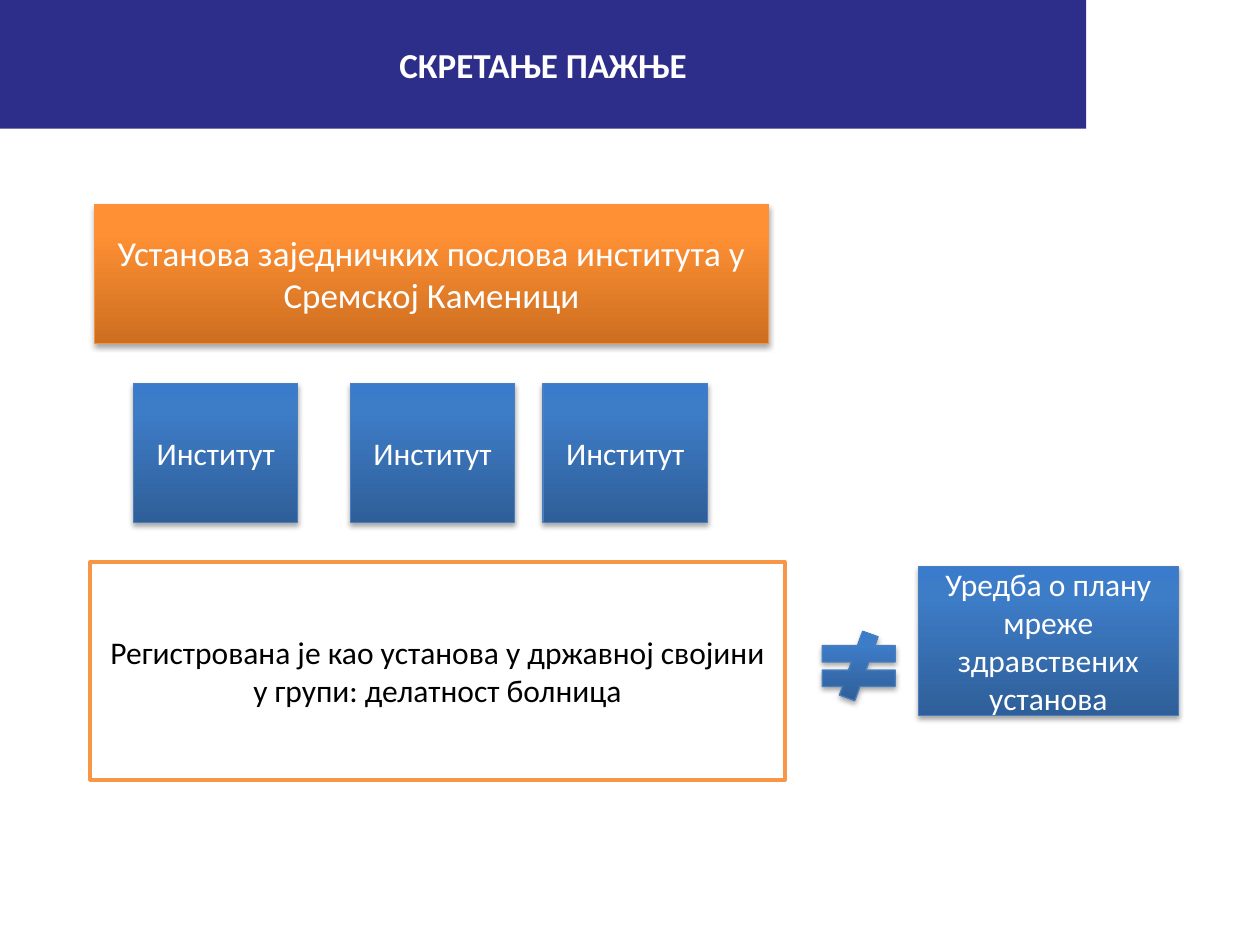
from copy import deepcopy

from lxml import etree
from pptx import Presentation
from pptx.dml.color import RGBColor
from pptx.enum.shapes import MSO_SHAPE
from pptx.enum.text import MSO_ANCHOR, PP_ALIGN
from pptx.oxml.ns import qn
from pptx.util import Pt

RECT, NOT_EQUAL = MSO_SHAPE.RECTANGLE, MSO_SHAPE.MATH_NOT_EQUAL
MIDDLE, CENTER = MSO_ANCHOR.MIDDLE, PP_ALIGN.CENTER
FONT = "Calibri"
COLORS = {
    "navy": "2D2D8A", "white": "FFFFFF", "black": "000000",
    "frame": "F79646", "orange_line": "F69240", "blue_line": "4B7EBC",
}
GRADIENTS = {
    "orange": ((0, "CC6E20"), (0.8, "FF9034"), (1, "FF9136")),
    "blue": ((0, "2F5F99"), (0.8, "3D7CC7"), (1, "3A7CCB")),
}

TITLE = "СКРЕТАЊЕ ПАЖЊЕ"
REGISTRATION = "Регистрована је као установа у државној својини у групи: делатност болница"
JOINT_BODY = "Установа заједничких послова института у Сремској Каменици"
REGULATION = "Уредба о плану мреже здравствених установа"
INSTITUTE = "Институт"
INSTITUTE_LEFTS = (76.3, 200.2, 310.3)

# (preset, (left, top, width, height), gradient, text, text size)
RAISED = [(RECT, (53.9, 116.8, 385.4, 79.4), "orange", JOINT_BODY, 20)]
RAISED += [(RECT, (x, 219, 93.9, 79.4), "blue", INSTITUTE, 18) for x in INSTITUTE_LEFTS]
RAISED += [
    (RECT, (524.8, 323.7, 148.6, 85.1), "blue", REGULATION, 18),
    (NOT_EQUAL, (462.4, 360.7, 56.7, 39.7), "blue", "", 18),
]


def rgb(name):
    return RGBColor.from_string(COLORS[name])


def add_box(slide, preset, box, text, size, color, bold=False, wrap=True):
    sp = slide.shapes.add_shape(preset, *(Pt(v) for v in box))
    sp.shadow.inherit = False
    tf = sp.text_frame
    tf.word_wrap = wrap
    tf.vertical_anchor = MIDDLE
    if text:
        tf.text = text
        p = tf.paragraphs[0]
        p.alignment = CENTER
        font = p.runs[0].font
        font.name, font.size, font.bold = FONT, Pt(size), bold
        font.color.rgb = rgb(color)
    return sp


def set_gradient(sp, stops):
    """Fill from bottom to top with three stops."""
    sp.fill.gradient()
    sp.fill.gradient_angle = 90
    stop_list = sp._element.spPr.find(".//" + qn("a:gsLst"))
    stop_list.append(deepcopy(stop_list[-1]))
    for stop, (position, color) in zip(sp.fill.gradient_stops, stops):
        stop.position = position
        stop.color.rgb = RGBColor.from_string(color)


def set_shadow(sp):
    effects = sp._element.spPr.find(qn("a:effectLst"))
    shadow = etree.SubElement(
        effects, qn("a:outerShdw"), blurRad=str(Pt(3.1)), dist=str(Pt(1.8)),
        dir="5400000", rotWithShape="0")
    color = etree.SubElement(shadow, qn("a:srgbClr"), val=COLORS["black"])
    etree.SubElement(color, qn("a:alpha"), val="35000")


def set_line(sp, color, width):
    sp.line.color.rgb = rgb(color)
    sp.line.width = Pt(width)


def main():
    prs = Presentation()
    prs.slide_width, prs.slide_height = Pt(720), Pt(540)
    slide = prs.slides.add_slide(prs.slide_layouts[6])

    banner = add_box(slide, RECT, (0, 0, 620.7, 73.5), TITLE, 20, "white",
                     bold=True, wrap=False)
    banner.fill.solid()
    banner.fill.fore_color.rgb = rgb("navy")
    banner.line.fill.background()

    frame = add_box(slide, RECT, (51.6, 321.1, 396.9, 124.6), REGISTRATION, 18, "black")
    frame.fill.solid()
    frame.fill.fore_color.rgb = rgb("white")
    set_line(frame, "frame", 2)

    for preset, box, gradient, text, size in RAISED:
        sp = add_box(slide, preset, box, text, size, "white")
        set_gradient(sp, GRADIENTS[gradient])
        set_line(sp, gradient + "_line", 0.75)
        set_shadow(sp)

    prs.save("out.pptx")


if __name__ == "__main__":
    main()
